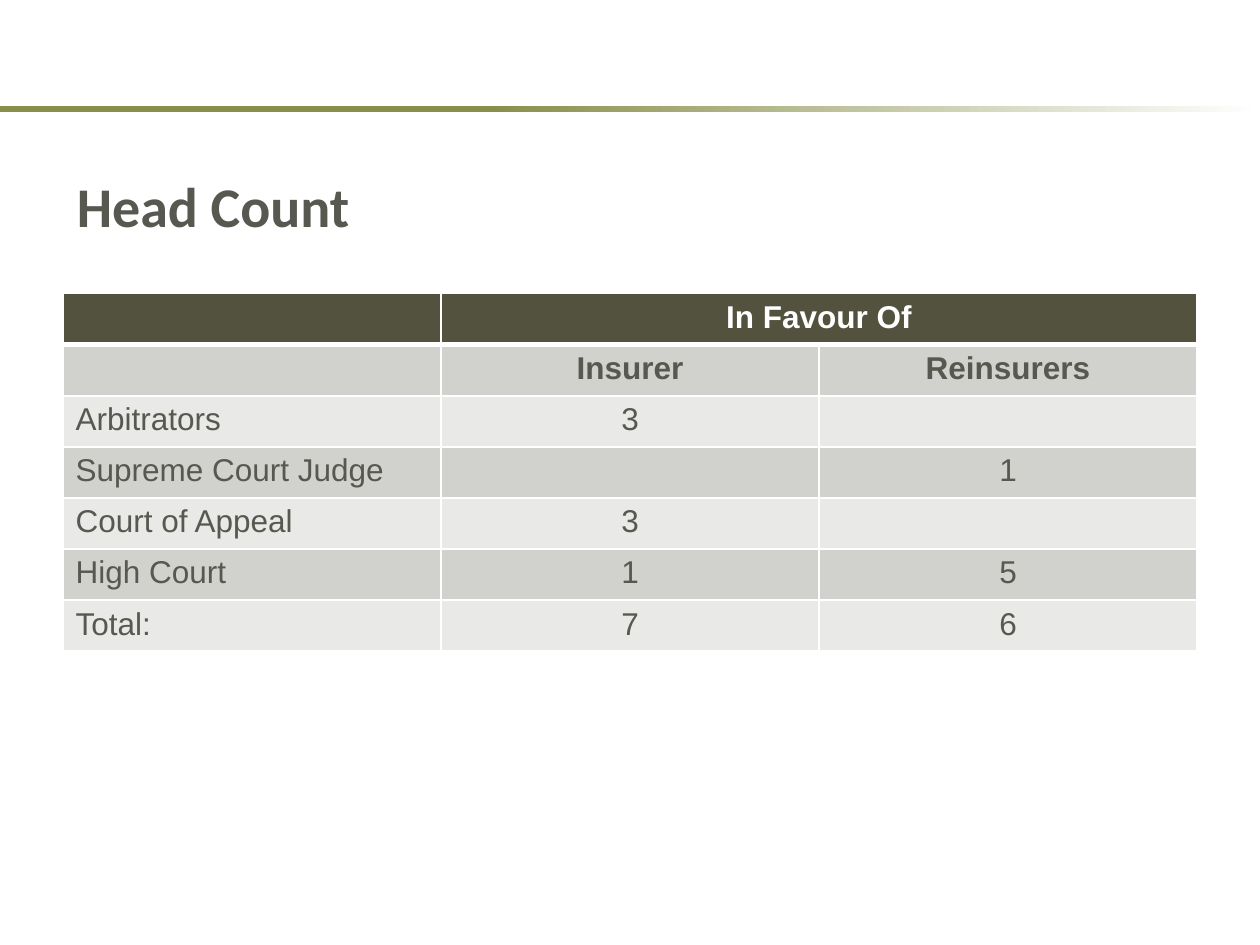
from copy import deepcopy

from lxml import etree
from pptx import Presentation
from pptx.dml.color import RGBColor
from pptx.enum.shapes import MSO_SHAPE
from pptx.enum.text import MSO_ANCHOR, PP_ALIGN
from pptx.oxml.ns import qn
from pptx.util import Inches, Pt

COLORS = {
    "olive": "898F4B",
    "header": "53523E",
    "dark_band": "D1D1CE",
    "light_band": "E9E9E8",
    "text": "57584F",
    "white": "FFFFFF",
}
HEAD_COUNT = [
    ["", "In Favour Of", ""],
    ["", "Insurer", "Reinsurers"],
    ["Arbitrators", "3", ""],
    ["Supreme Court Judge", "", "1"],
    ["Court of Appeal", "3", ""],
    ["High Court", "1", "5"],
    ["Total:", "7", "6"],
]


def rgb(color):
    return RGBColor.from_string(COLORS[color])


class SlideBuilder:
    def __init__(self, slide):
        self.slide = slide
        self.title_format = {"name": "Calibri", "size": Pt(32), "bold": True}
        self.cell_format = {"name": "Arial", "size": Pt(18)}

    def format_font(self, font, color, values):
        for attribute, value in values.items():
            setattr(font, attribute, value)
        font.color.rgb = rgb(color)

    def title(self, text, left, top, width, height):
        title = self.slide.shapes.title
        title.left, title.top = Inches(left), Inches(top)
        title.width, title.height = Inches(width), Inches(height)
        frame = title.text_frame
        frame.text = text
        frame.word_wrap = True
        frame.vertical_anchor = MSO_ANCHOR.TOP
        paragraph = frame.paragraphs[0]
        paragraph.alignment = PP_ALIGN.LEFT
        self.format_font(paragraph.runs[0].font, "text", self.title_format)

    def gradient_bar(self, left, top, width, height, stops):
        bar = self.slide.shapes.add_shape(
            MSO_SHAPE.RECTANGLE, Inches(left), Inches(top), Inches(width), Inches(height))
        bar.shadow.inherit = False
        bar.line.fill.background()
        bar.fill.gradient()
        bar.fill.gradient_angle = 0
        stop_list = next(bar._element.spPr.iter(qn("a:gsLst")))
        while len(stop_list) < len(stops):
            stop_list.append(deepcopy(stop_list[-1]))
        for stop, (position, color) in zip(bar.fill.gradient_stops, stops):
            stop.position = position
            stop.color.rgb = rgb(color)

    def cell_borders(self, cell, bottom_width):
        properties = cell._tc.get_or_add_tcPr()
        widths = {"a:lnL": 1, "a:lnR": 1, "a:lnT": 1, "a:lnB": bottom_width}
        for index, (tag, width) in enumerate(widths.items()):
            line = etree.Element(qn(tag), w=str(Pt(width)))
            fill = etree.SubElement(line, qn("a:solidFill"))
            etree.SubElement(fill, qn("a:srgbClr"), val=COLORS["white"])
            properties.insert(index, line)

    def table(self, rows, left, top, width, height):
        table = self.slide.shapes.add_table(
            len(rows), len(rows[0]), Inches(left), Inches(top),
            Inches(width), Inches(height)).table
        for row_index, row in enumerate(rows):
            is_header = row_index == 0
            band = "dark_band" if row_index % 2 else "light_band"
            for column_index, text in enumerate(row):
                cell = table.cell(row_index, column_index)
                cell.fill.solid()
                cell.fill.fore_color.rgb = rgb("header" if is_header else band)
                self.cell_borders(cell, 3 if is_header else 1)
                cell.text = text
                paragraph = cell.text_frame.paragraphs[0]
                paragraph.alignment = PP_ALIGN.CENTER if column_index else PP_ALIGN.LEFT
                self.format_font(paragraph.font, "white" if is_header else "text",
                                 {**self.cell_format, "bold": row_index < 2})
        return table


def main():
    deck = Presentation()
    deck.slide_width, deck.slide_height = Inches(10), Inches(7.5)
    builder = SlideBuilder(deck.slides.add_slide(deck.slide_layouts[5]))

    # Fading bar across the top
    builder.gradient_bar(0, 0.84, 10, 0.05,
                         [(0, "olive"), (0.39, "olive"), (1, "white")])

    # Title
    builder.title("Head Count", 0.51, 1.31, 8.9, 0.79)

    # Head count by court, with one heading over both parties
    head_count = builder.table(HEAD_COUNT, 0.5, 2.33, 9, 2.84)
    head_count.cell(0, 1).merge(head_count.cell(0, 2))

    deck.save("out.pptx")


if __name__ == "__main__":
    main()
